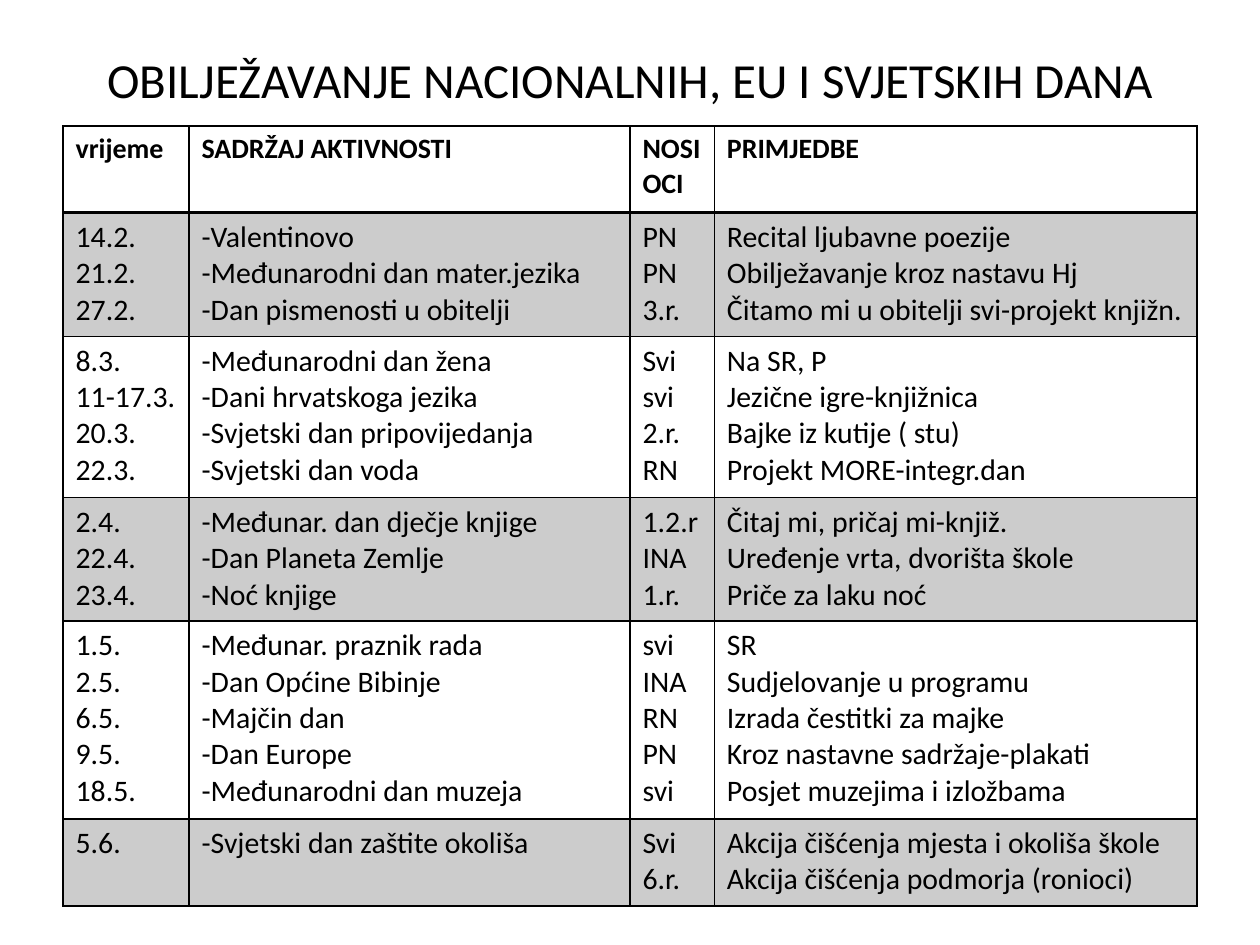
"""Build a slide with a table of national, EU and world days."""
from lxml.etree import SubElement
from pptx import Presentation
from pptx.dml.color import RGBColor
from pptx.enum.text import MSO_ANCHOR, PP_ALIGN
from pptx.oxml.ns import qn
from pptx.util import Inches, Pt

TITLE = "OBILJEŽAVANJE NACIONALNIH, EU I SVJETSKIH DANA"
HEADER = [["vrijeme"], ["SADRŽAJ AKTIVNOSTI"], ["NOSI", "OCI"], ["PRIMJEDBE"]]
MONTHS = [
    [
        ["14.2.", "21.2.", "27.2."],
        ["-Valentinovo", "-Međunarodni dan mater.jezika", "-Dan pismenosti u obitelji"],
        ["PN", "PN", "3.r."],
        ["Recital ljubavne poezije", "Obilježavanje kroz nastavu Hj",
         "Čitamo mi u obitelji svi-projekt knjižn."],
    ],
    [
        ["8.3.", "11-17.3.", "20.3.", "22.3."],
        ["-Međunarodni dan žena", "-Dani hrvatskoga jezika",
         "-Svjetski dan pripovijedanja", "-Svjetski dan voda"],
        ["Svi", "svi", "2.r.", "RN"],
        ["Na SR, P", "Jezične igre-knjižnica", "Bajke iz kutije ( stu)",
         "Projekt MORE-integr.dan"],
    ],
    [
        ["2.4.", "22.4.", "23.4."],
        ["-Međunar. dan dječje knjige", "-Dan Planeta Zemlje", "-Noć knjige"],
        ["1.2.r", "INA", "1.r."],
        ["Čitaj mi, pričaj mi-knjiž.", "Uređenje vrta, dvorišta škole",
         "Priče za laku noć"],
    ],
    [
        ["1.5.", "2.5.", "6.5.", "9.5.", "18.5."],
        ["-Međunar. praznik rada", "-Dan Općine Bibinje", "-Majčin dan",
         "-Dan Europe", "-Međunarodni dan muzeja"],
        ["svi", "INA", "RN", "PN", "svi"],
        ["SR", "Sudjelovanje u programu", "Izrada čestitki za majke",
         "Kroz nastavne sadržaje-plakati", "Posjet muzejima i izložbama"],
    ],
    [
        ["5.6."],
        ["-Svjetski dan zaštite okoliša"],
        ["Svi", "6.r."],
        ["Akcija čišćenja mjesta i okoliša škole", "Akcija čišćenja podmorja (ronioci)"],
    ],
]
COLUMN_WIDTHS = [1, 3.5, 0.67, 3.83]
ROW_HEIGHTS = [0.69, 0.98, 1.28, 0.98, 1.57, 0.69]
BLACK = "000000"
BAND_OPACITY = 20
TITLE_FORMAT = {"name": "Calibri", "size": Pt(28), "bold": False}
HEADER_FORMAT = {"name": "Calibri", "size": Pt(16), "bold": True}
BODY_FORMAT = {"name": "Calibri", "size": Pt(17), "bold": False}


def paint(color_format, color):
    color_format.rgb = RGBColor.from_string(color)


def write(frame, lines, font_format):
    frame.text = "\n".join(lines)
    for paragraph in frame.paragraphs:
        font = paragraph.runs[0].font
        for attribute, value in font_format.items():
            setattr(font, attribute, value)
        paint(font.color, BLACK)


def add_borders(cell, widths):
    properties = cell._tc.get_or_add_tcPr()
    for side, width in widths.items():
        border = SubElement(properties, qn(f"a:ln{side}"), w=str(Pt(width)))
        SubElement(SubElement(border, qn("a:solidFill")), qn("a:srgbClr"), val=BLACK)


def shade(cell):
    cell.fill.solid()
    paint(cell.fill.fore_color, BLACK)
    color = cell._tc.tcPr.find(qn("a:solidFill")).find(qn("a:srgbClr"))
    SubElement(color, qn("a:alpha"), val=str(BAND_OPACITY * 1000))


def add_title(slide):
    title = slide.shapes.add_textbox(Inches(0.5), Inches(0.25), Inches(9), Inches(0.75))
    frame = title.text_frame
    frame.word_wrap = True
    frame.vertical_anchor = MSO_ANCHOR.MIDDLE
    write(frame, [TITLE], TITLE_FORMAT)
    frame.paragraphs[0].alignment = PP_ALIGN.CENTER


def add_calendar(slide):
    rows = [HEADER, *MONTHS]
    calendar = slide.shapes.add_table(
        len(rows), len(HEADER), Inches(0.5), Inches(1),
        Inches(sum(COLUMN_WIDTHS)), Inches(sum(ROW_HEIGHTS)),
    ).table
    for column, width in zip(calendar.columns, COLUMN_WIDTHS):
        column.width = Inches(width)
    for row, height in zip(calendar.rows, ROW_HEIGHTS):
        row.height = Inches(height)
    for r, entries in enumerate(rows):
        for c, lines in enumerate(entries):
            cell = calendar.cell(r, c)
            write(cell.text_frame, lines, BODY_FORMAT if r else HEADER_FORMAT)
            add_borders(cell, {"L": 1, "R": 1, "T": 2 if r == 1 else 1, "B": 1 if r else 2})
            if r % 2:
                shade(cell)
            else:
                cell.fill.background()


def main():
    presentation = Presentation()
    presentation.slide_width = Inches(10)
    presentation.slide_height = Inches(7.5)
    slide = presentation.slides.add_slide(presentation.slide_layouts[6])
    add_title(slide)
    add_calendar(slide)
    presentation.save("out.pptx")


if __name__ == "__main__":
    main()
